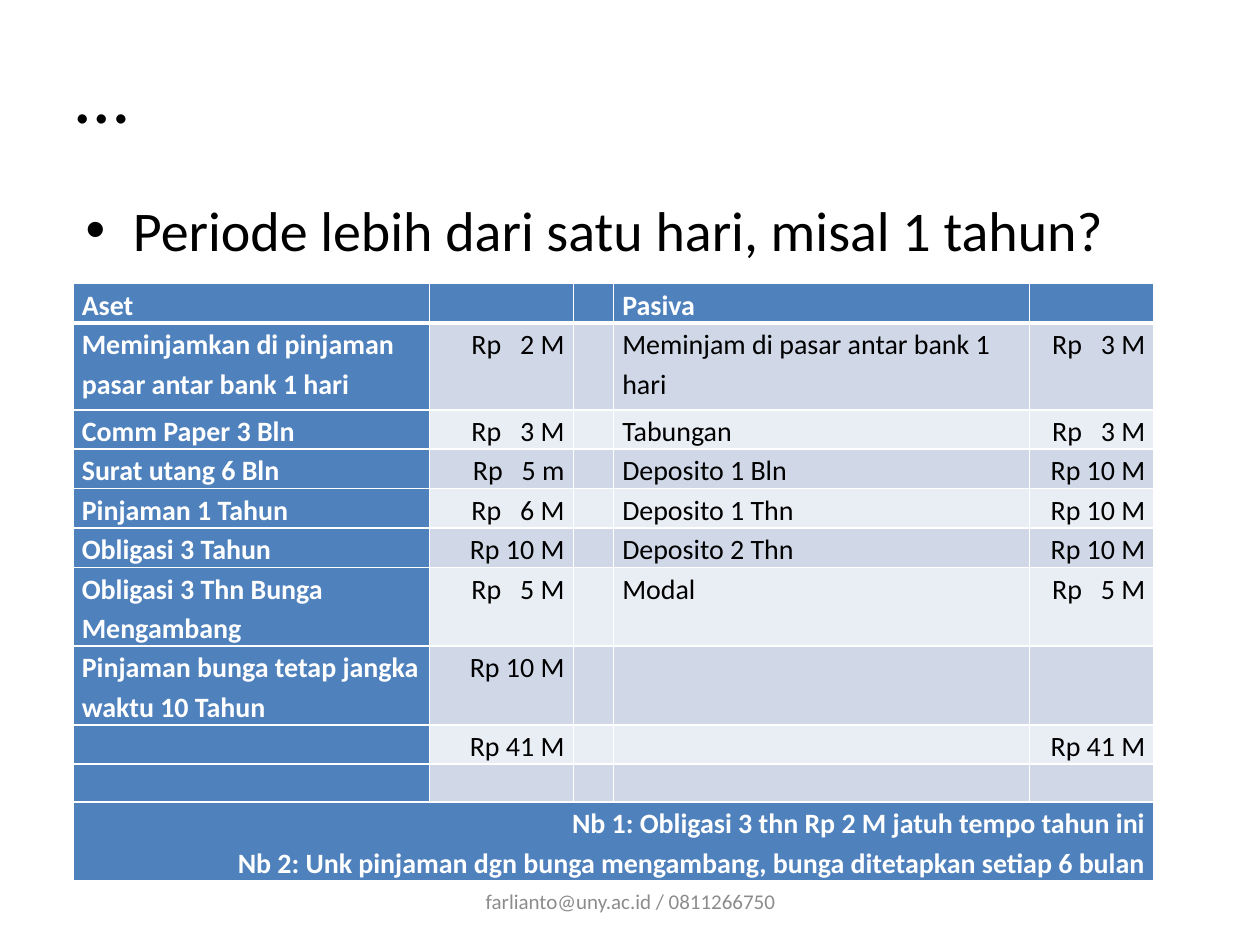
from typing import NamedTuple

from lxml.etree import SubElement
from pptx import Presentation
from pptx.dml.color import RGBColor
from pptx.enum.text import MSO_ANCHOR as Anchor, PP_ALIGN as Align
from pptx.oxml.ns import qn
from pptx.util import Inches, Pt

BLUE, BAND_DARK, BAND_LIGHT = "4F81BD", "D0D8E8", "E9EDF4"
WHITE, BLACK, GREY = "FFFFFF", "000000", "8C8C8C"
TABLE_SIZE = 16


class BalanceRow(NamedTuple):
    asset: str = ""
    asset_value: str = ""
    gap: str = ""
    liability: str = ""
    liability_value: str = ""
    height: float = 0.3


BALANCE = [
    BalanceRow("Aset", liability="Pasiva"),
    BalanceRow("Meminjamkan di pinjaman pasar antar bank 1 hari", "Rp   2 M", "",
               "Meminjam di pasar antar bank 1 hari", "Rp   3 M", 0.69),
    BalanceRow("Comm Paper 3 Bln", "Rp   3 M", "", "Tabungan", "Rp   3 M"),
    BalanceRow("Surat utang 6 Bln", "Rp   5 m", "", "Deposito 1 Bln", "Rp 10 M"),
    BalanceRow("Pinjaman 1 Tahun", "Rp   6 M", "", "Deposito 1 Thn", "Rp 10 M"),
    BalanceRow("Obligasi 3 Tahun", "Rp 10 M", "", "Deposito 2 Thn", "Rp 10 M"),
    BalanceRow("Obligasi 3 Thn Bunga Mengambang", "Rp   5 M", "", "Modal", "Rp   5 M", 0.62),
    BalanceRow("Pinjaman bunga tetap jangka waktu 10 Tahun", "Rp 10 M", height=0.62),
    BalanceRow(asset_value="Rp 41 M", liability_value="Rp 41 M"),
    BalanceRow(),
    BalanceRow("Nb 1: Obligasi 3 thn Rp 2 M jatuh tempo tahun ini\n"
               "Nb 2: Unk pinjaman dgn bunga mengambang, bunga ditetapkan setiap 6 bulan",
               height=0.62),
]
COLUMN_WIDTHS = [2.83, 1.14, 0.32, 3.3, 0.99]
VALUE_COLUMNS = (1, 4)


def rgb(value: str) -> RGBColor:
    return RGBColor.from_string(value)


def write(frame, text: str, *, size: float, color: str = BLACK, bold: bool = False,
          align=Align.LEFT, line_spacing: float = 1.0) -> None:
    """Fill a text frame, one paragraph for each line of text."""
    frame.text = text
    for paragraph in frame.paragraphs:
        paragraph.alignment = align
        paragraph.line_spacing = line_spacing
        paragraph.space_before = Pt(0)
        for run in paragraph.runs:
            font = run.font
            font.name, font.size, font.bold = "Calibri", Pt(size), bold
            font.color.rgb = rgb(color)
        if not paragraph.runs:
            SubElement(paragraph._p, qn("a:endParaRPr"), sz=str(size * 100))


def place(shape, left: float, top: float, width: float, height: float) -> None:
    shape.left, shape.top = Inches(left), Inches(top)
    shape.width, shape.height = Inches(width), Inches(height)


def set_borders(cell, top: float = 1, bottom: float = 1) -> None:
    properties = cell._tc.get_or_add_tcPr()
    for side, width in (("L", 1), ("R", 1), ("T", top), ("B", bottom)):
        line = SubElement(properties, qn(f"a:ln{side}"), w=str(Pt(width)))
        fill = SubElement(line, qn("a:solidFill"))
        SubElement(fill, qn("a:srgbClr"), val=WHITE)


def draw_balance(slide, rows: list[BalanceRow]) -> None:
    table = slide.shapes.add_table(
        len(rows), len(COLUMN_WIDTHS), Inches(0.58), Inches(2.25),
        Inches(sum(COLUMN_WIDTHS)), Inches(sum(row.height for row in rows))).table
    for column, width in zip(table.columns, COLUMN_WIDTHS):
        column.width = Inches(width)
    last = len(rows) - 1
    table.cell(last, 0).merge(table.cell(last, len(COLUMN_WIDTHS) - 1))
    for r, row in enumerate(rows):
        table.rows[r].height = Inches(row.height)
        for c, text in enumerate(row[:len(COLUMN_WIDTHS)]):
            cell = table.cell(r, c)
            strong = c == 0 or r in (0, last)
            cell.margin_left = cell.margin_right = Inches(0.07)
            cell.margin_top = cell.margin_bottom = 0
            set_borders(cell, top=3 if r == 1 else 1, bottom=3 if r == 0 else 1)
            cell.fill.solid()
            band = BAND_DARK if r % 2 else BAND_LIGHT
            cell.fill.fore_color.rgb = rgb(BLUE if strong else band)
            right = c in VALUE_COLUMNS or r == last
            write(cell.text_frame, text, size=TABLE_SIZE, bold=strong,
                  color=WHITE if strong else BLACK, line_spacing=1.15,
                  align=Align.RIGHT if right else Align.LEFT)


def main() -> None:
    deck = Presentation()
    deck.slide_width, deck.slide_height = Inches(10), Inches(7.5)
    slide = deck.slides.add_slide(deck.slide_layouts[1])

    title, question = slide.placeholders
    place(title, 0.5, 0.3, 9, 0.87)
    title.text_frame.vertical_anchor = Anchor.MIDDLE
    write(title.text_frame, "…", size=44)
    place(question, 0.58, 1.5, 9, 5.2)
    write(question.text_frame, "Periode lebih dari satu hari, misal 1 tahun?", size=32)

    draw_balance(slide, BALANCE)

    contact = slide.shapes.add_textbox(Inches(3.42), Inches(6.95), Inches(3.17), Inches(0.4))
    contact.text_frame.word_wrap = True
    contact.text_frame.vertical_anchor = Anchor.MIDDLE
    write(contact.text_frame, "farlianto@uny.ac.id / 0811266750",
          size=12, color=GREY, align=Align.CENTER)

    deck.save("out.pptx")


if __name__ == "__main__":
    main()
